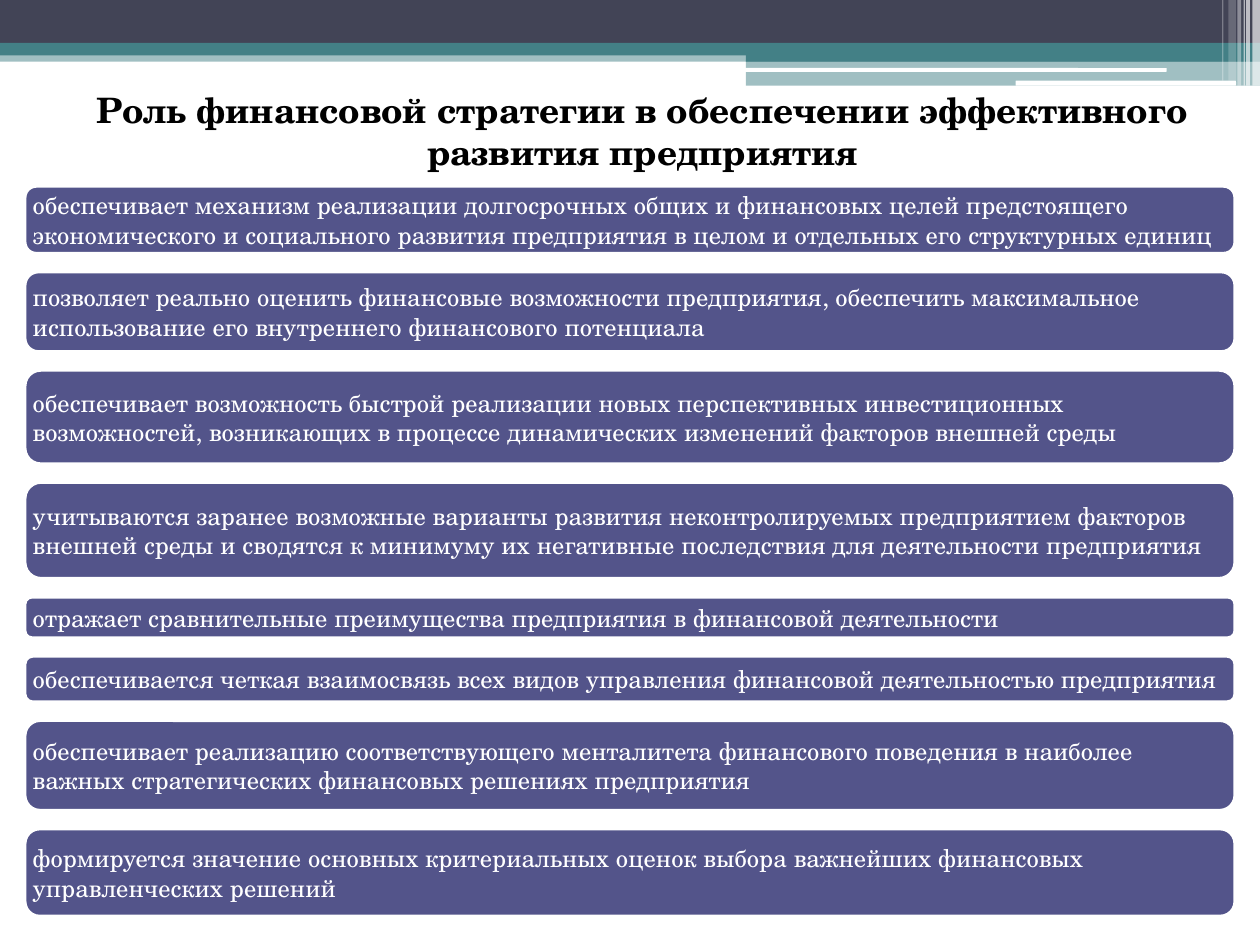
from typing import NamedTuple

import lxml.etree
import pptx
import pptx.dml.color
import pptx.enum.shapes
import pptx.enum.text
import pptx.oxml.ns
import pptx.util

SHAPES = pptx.enum.shapes.MSO_SHAPE
FONT = "TeX Gyre Schola"
SLIDE_W, SLIDE_H = 10, 7.5
MARGIN = 0.02 * SLIDE_W
ROLE_W = SLIDE_W - 2 * MARGIN
ROLES_TOP, ROLE_GAP = 1.48, 0.15
CORNER = 0.1667
TEXT_INSET = 0.06
CORNER_TEXT_SHARE = 0.29  # a rounded corner pushes text in by this share of its radius

TEAL, SLATE, WHITE, VIOLET = "438086", "424456", "FFFFFF", "53548A"


class Band(NamedTuple):
    left: float
    top: float
    width: float
    height: float
    fill: str
    opacity: int = 100
    kind: int = SHAPES.RECTANGLE


class Role(NamedTuple):
    height: float
    text: str


BANDS = [
    Band(0, 0.4, 10, 0.09, TEAL, 50),
    Band(0, 0, 10, 0.34, SLATE),
    Band(0, 0.34, 10, 0.1, TEAL),
    Band(5.92, 0.39, 4.08, 0.1, TEAL),
    Band(5.92, 0.48, 4.08, 0.2, TEAL, 50),
    Band(5.91, 0.54, 3.35, 0.03, WHITE, kind=SHAPES.ROUNDED_RECTANGLE),
    Band(8.06, 0.64, 1.75, 0.04, WHITE, kind=SHAPES.ROUNDED_RECTANGLE),
]

# Thin vertical stripes in the corner: left, width, height, opacity
STRIPES = [
    (9.94, 0.06, 0.68, 65),
    (9.89, 0.03, 0.68, 65),
    (9.87, 0.01, 0.68, 60),
    (9.82, 0.03, 0.68, 40),
    (9.75, 0.06, 0.64, 20),
    (9.7, 0.01, 0.64, 30),
]

TITLE = "Роль финансовой стратегии в обеспечении эффективного развития предприятия"

ROLES = [
    Role(0.53, "обеспечивает механизм реализации долгосрочных общих и финансовых целей "
               "предстоящего экономического и социального развития предприятия в целом "
               "и отдельных его структурных единиц"),
    Role(0.63, "позволяет реально оценить финансовые возможности предприятия, обеспечить "
               "максимальное использование его внутреннего финансового потенциала"),
    Role(0.74, "обеспечивает возможность быстрой реализации новых перспективных "
               "инвестиционных возможностей, возникающих в процессе динамических "
               "изменений факторов внешней среды"),
    Role(0.76, "учитываются заранее возможные варианты развития неконтролируемых "
               "предприятием факторов внешней среды и сводятся к минимуму их "
               "негативные последствия для деятельности предприятия"),
    Role(0.32, "отражает сравнительные преимущества предприятия в финансовой деятельности"),
    Role(0.36, "обеспечивается четкая взаимосвязь всех видов управления финансовой "
               "деятельностью предприятия"),
    Role(0.71, "обеспечивает реализацию соответствующего менталитета финансового поведения "
               "в наиболее важных стратегических финансовых решениях предприятия"),
    Role(0.69, "формируется значение основных критериальных оценок выбора важнейших "
               "финансовых управленческих решений"),
]


def color(hex_value: str) -> pptx.dml.color.RGBColor:
    return pptx.dml.color.RGBColor.from_string(hex_value)


def set_all(target, values: dict) -> None:
    for name, value in values.items():
        setattr(target, name, value)


def box(left: float, top: float, width: float, height: float) -> dict:
    lengths = dict(left=left, top=top, width=width, height=height)
    return {name: pptx.util.Inches(length) for name, length in lengths.items()}


def write(shape, text: str, size: int, hex_value: str, bold: bool, align: int) -> None:
    frame = shape.text_frame
    set_all(frame, dict(text=text, word_wrap=True,
                        auto_size=pptx.enum.text.MSO_AUTO_SIZE.NONE,
                        vertical_anchor=pptx.enum.text.MSO_ANCHOR.MIDDLE))
    paragraph = frame.paragraphs[0]
    paragraph.alignment = align
    font = paragraph.runs[0].font
    set_all(font, dict(name=FONT, size=pptx.util.Pt(size), bold=bold))
    font.color.rgb = color(hex_value)


def draw_band(slide, band: Band):
    shape = slide.shapes.add_shape(
        band.kind, **box(band.left, band.top, band.width, band.height))
    shape.shadow.inherit = False
    shape.fill.solid()
    shape.fill.fore_color.rgb = color(band.fill)
    shape.line.fill.background()
    if band.opacity < 100:
        tint = shape.fill._xPr.find(".//" + pptx.oxml.ns.qn("a:srgbClr"))
        alpha = lxml.etree.SubElement(tint, pptx.oxml.ns.qn("a:alpha"))
        alpha.set("val", str(band.opacity * 1000))
    return shape


def draw_role(slide, role: Role, top: float) -> None:
    shape = draw_band(slide, Band(MARGIN, top, ROLE_W, role.height, VIOLET,
                                  kind=SHAPES.ROUNDED_RECTANGLE))
    shape.adjustments[0] = CORNER
    shape.line.color.rgb = color(WHITE)
    shape.line.width = pptx.util.Pt(1.5)
    inset = pptx.util.Inches(TEXT_INSET - CORNER_TEXT_SHARE * CORNER * role.height)
    sides = ("left", "top", "right", "bottom")
    set_all(shape.text_frame, {f"margin_{side}": inset for side in sides})
    write(shape, role.text, 14, WHITE, False, pptx.enum.text.PP_ALIGN.LEFT)


def main() -> None:
    deck = pptx.Presentation()
    deck.slide_width = pptx.util.Inches(SLIDE_W)
    deck.slide_height = pptx.util.Inches(SLIDE_H)
    slide = deck.slides.add_slide(deck.slide_layouts[5])

    # Header decoration
    for band in BANDS:
        draw_band(slide, band)
    for left, width, height, opacity in STRIPES:
        draw_band(slide, Band(left, 0, width, height, WHITE, opacity))

    # Title
    title = slide.shapes.title
    set_all(title, box(MARGIN, 0.08 * SLIDE_H, SLIDE_W - MARGIN, 0.87))
    write(title, TITLE, 20, "000000", True, pptx.enum.text.PP_ALIGN.CENTER)

    # Stack of roles
    top = ROLES_TOP
    for role in ROLES:
        draw_role(slide, role, top)
        top += role.height + ROLE_GAP

    deck.save("out.pptx")


if __name__ == "__main__":
    main()
